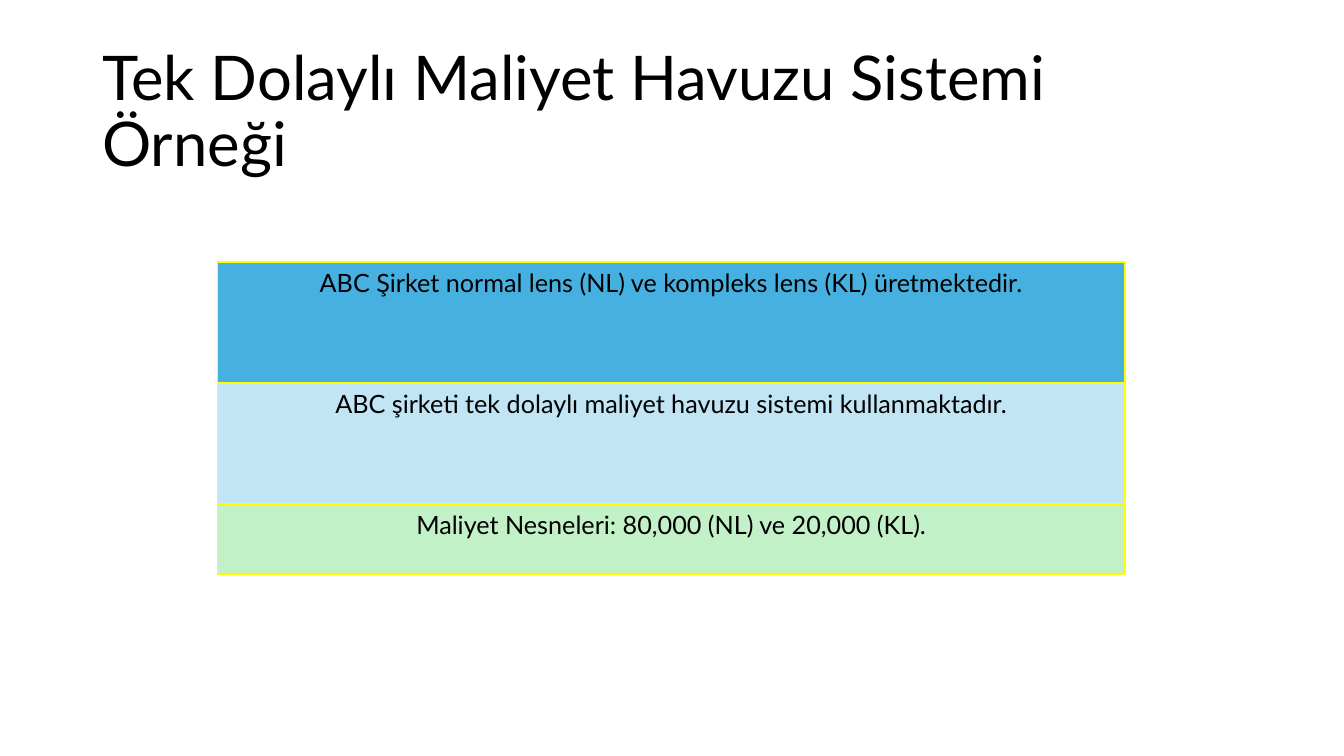
"""Builds a slide with a title above three stacked bands of facts."""
from pptx import Presentation
from pptx import util as u
from pptx.dml.color import RGBColor
from pptx.enum import shapes, text

TITLE = "Tek Dolaylı Maliyet Havuzu Sistemi Örneği"
BANDS = [
    ("ABC Şirket normal lens (NL) ve kompleks lens (KL) üretmektedir.", "46B1E1", 86.4),
    ("ABC şirketi tek dolaylı maliyet havuzu sistemi kullanmaktadır.", "C1E5F5", 86.4),
    ("Maliyet Nesneleri: 80,000 (NL) ve 20,000 (KL).", "C2F1C8", 50.4),
]
FONT, INK, EDGE = "Lato", "000000", "FFFF00"
LEFT, TOP, WIDTH = 155.5, 187.2, 648


def tint(part, code):
    part.rgb = RGBColor.from_string(code)


def write(shape, words, size, align, anchor):
    frame = shape.text_frame
    frame.word_wrap = True
    frame.vertical_anchor = anchor
    para = frame.paragraphs[0]
    para.alignment = align
    run = para.add_run()
    run.text = words
    run.font.name = FONT
    run.font.size = u.Pt(size)
    tint(run.font.color, INK)
    return para


def main():
    deck = Presentation()
    deck.slide_width, deck.slide_height = u.Pt(960), u.Pt(540)
    slide = deck.slides.add_slide(deck.slide_layouts[6])

    head = slide.shapes.add_textbox(*map(u.Pt, (66, 28.8, 828, 104.4)))
    para = write(head, TITLE, 44, text.PP_ALIGN.LEFT, text.MSO_ANCHOR.MIDDLE)
    para.line_spacing = 0.9

    top = TOP
    for words, fill, height in BANDS:
        band = slide.shapes.add_shape(
            shapes.MSO_SHAPE.RECTANGLE, *map(u.Pt, (LEFT, top, WIDTH, height)))
        band.shadow.inherit = False
        band.fill.solid()
        tint(band.fill.fore_color, fill)
        tint(band.line.color, EDGE)
        band.line.width = u.Pt(1)
        write(band, words, 18, text.PP_ALIGN.CENTER, text.MSO_ANCHOR.TOP)
        top += height

    deck.save("out.pptx")


if __name__ == "__main__":
    main()
